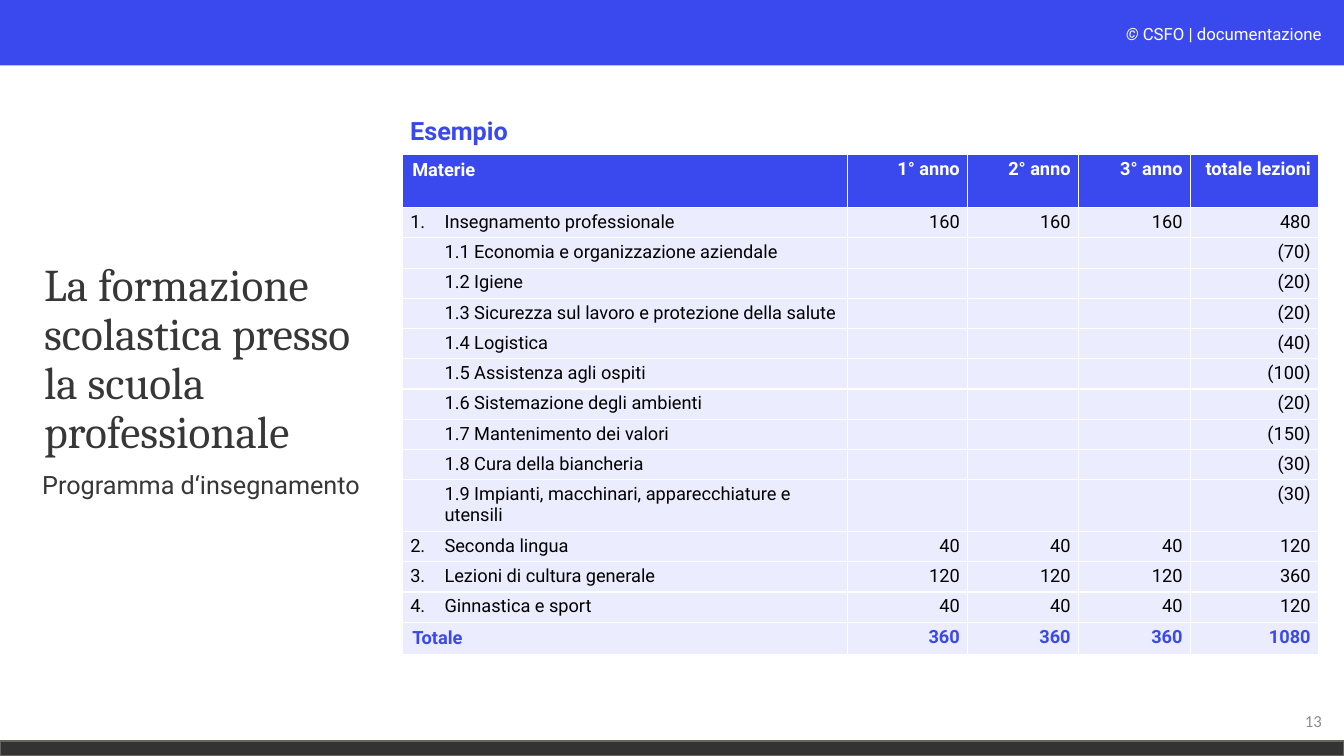
from lxml import etree
from pptx import Presentation
from pptx.dml.color import RGBColor
from pptx.enum.shapes import MSO_SHAPE
from pptx.enum.text import MSO_ANCHOR, PP_ALIGN
from pptx.oxml.ns import qn
from pptx.util import Inches, Pt

LEFT, RIGHT = PP_ALIGN.LEFT, PP_ALIGN.RIGHT
TOP, MIDDLE = MSO_ANCHOR.TOP, MSO_ANCHOR.MIDDLE
RECTANGLE = MSO_SHAPE.RECTANGLE

WHITE = RGBColor(0xFF, 0xFF, 0xFF)
BLACK = RGBColor(0x00, 0x00, 0x00)
BLUE = RGBColor(0x3A, 0x49, 0xEE)
PALE_BLUE = RGBColor(0xEB, 0xEC, 0xFE)
CHARCOAL = RGBColor(0x33, 0x33, 0x33)
FOOTER_EDGE = RGBColor(0x66, 0x63, 0x60)
INK = RGBColor(0x37, 0x37, 0x37)
GREY = RGBColor(0x8C, 0x8C, 0x8C)

SLIDE_WIDTH, SLIDE_HEIGHT = Inches(13.33), Inches(7.5)
COLUMN_SHARES = (2.55, 30.6, 8.93, 8.25, 8.33, 9.53)
HEADER_SHARE, ROW_SHARE = 7.07, 4
TABLE_SIZE = Pt(13)

HEADINGS = ("Materie", "", "1° anno", "2° anno", "3° anno", "totale lezioni")
PROFESSIONAL_TOPICS = (
    ("Economia e organizzazione aziendale", 70),
    ("Igiene", 20),
    ("Sicurezza sul lavoro e protezione della salute", 20),
    ("Logistica", 40),
    ("Assistenza agli ospiti", 100),
    ("Sistemazione degli ambienti", 20),
    ("Mantenimento dei valori", 150),
    ("Cura della biancheria", 30),
    ("Impianti, macchinari, apparecchiature e utensili", 30),
)
SUBJECTS = (
    ("Insegnamento professionale", 160),
    ("Seconda lingua", 40),
    ("Lezioni di cultura generale", 120),
    ("Ginnastica e sport", 40),
)
YEARS = 3


def across(percent):
    return round(SLIDE_WIDTH * percent / 100)


def down(percent):
    return round(SLIDE_HEIGHT * percent / 100)


def area(left, top, width, height):
    return across(left), down(top), across(width), down(height)


def style_font(font, size, color, name="Roboto", bold=False):
    font.size = size
    font.name = name
    font.bold = bold
    font.color.rgb = color


def add_band(slide, place, color, edge=None):
    band = slide.shapes.add_shape(RECTANGLE, *area(*place))
    band.shadow.inherit = False
    band.fill.solid()
    band.fill.fore_color.rgb = color
    if edge is None:
        band.line.fill.background()
    else:
        band.line.color.rgb = edge
        band.line.width = Pt(1)


def add_text(slide, place, wording, size, color, name="Roboto", bold=False,
             align=LEFT, anchor=TOP, spacing=1.0):
    frame = slide.shapes.add_textbox(*area(*place)).text_frame
    frame.word_wrap = True
    frame.vertical_anchor = anchor
    line = frame.paragraphs[0]
    line.alignment = align
    line.line_spacing = spacing
    style_font(line.font, Pt(size), color, name, bold)
    for part in wording:
        line.add_run().text = part
    return line


def add_border(cell, side, visible):
    border = etree.SubElement(cell._tc.get_or_add_tcPr(), qn(f"a:ln{side}"), w=str(Pt(1)))
    if visible:
        paint = etree.SubElement(border, qn("a:solidFill"))
        etree.SubElement(paint, qn("a:srgbClr"), val=str(WHITE))
    else:
        etree.SubElement(border, qn("a:noFill"))


def fill_cell(cell, column, wording, fill, color, bold):
    for side in "LRTB":
        inside_subject = (column, side) in ((0, "R"), (1, "L"))
        add_border(cell, side, not inside_subject or cell.is_merge_origin)
    cell.fill.solid()
    cell.fill.fore_color.rgb = fill
    wide = cell.is_merge_origin
    cell.margin_left = cell.margin_right = Inches(0.1 if wide else 0.08)
    cell.margin_top = cell.margin_bottom = Inches(0.05 if wide else 0.04)
    line = cell.text_frame.paragraphs[0]
    line.alignment = RIGHT if column > 1 else LEFT
    style_font(line.font, TABLE_SIZE, color, bold=bold)
    if wording:
        line.add_run().text = wording
    else:
        line._p.get_or_add_endParaRPr().set("sz", str(round(TABLE_SIZE.pt * 100)))


def lesson_rows():
    rows = [HEADINGS]
    for number, (subject, lessons) in enumerate(SUBJECTS, 1):
        yearly = (str(lessons),) * YEARS
        rows.append((f"{number}.", subject, *yearly, str(lessons * YEARS)))
        if number == 1:
            for part, (topic, hours) in enumerate(PROFESSIONAL_TOPICS, 1):
                rows.append(("", f"1.{part} {topic}", *("",) * YEARS, f"({hours})"))
    total = sum(lessons for _, lessons in SUBJECTS)
    rows.append(("Totale", "", *(str(total),) * YEARS, str(total * YEARS)))
    return rows


def add_lesson_table(slide, left, top):
    rows = lesson_rows()
    last = len(rows) - 1
    place = area(left, top, sum(COLUMN_SHARES), HEADER_SHARE + last * ROW_SHARE)
    lessons = slide.shapes.add_table(len(rows), len(COLUMN_SHARES), *place).table
    lessons.first_row = lessons.horz_banding = False
    for column, share in zip(lessons.columns, COLUMN_SHARES):
        column.width = across(share)
    for index, row in enumerate(rows):
        lessons.rows[index].height = down(ROW_SHARE if index else HEADER_SHARE)
        emphasis = index in (0, last)
        if emphasis:
            lessons.cell(index, 0).merge(lessons.cell(index, 1))
        fill = PALE_BLUE if index else BLUE
        color = WHITE if index == 0 else BLUE if index == last else BLACK
        for column, wording in enumerate(row):
            fill_cell(lessons.cell(index, column), column, wording, fill, color, emphasis)


def main():
    deck = Presentation()
    deck.slide_width, deck.slide_height = SLIDE_WIDTH, SLIDE_HEIGHT
    slide = deck.slides.add_slide(deck.slide_layouts[6])

    add_band(slide, (0, 0, 100, 8.67), BLUE)
    add_band(slide, (0, 98, 100, 2), CHARCOAL, FOOTER_EDGE)
    credit = add_text(slide, (64.66, 2.53, 34.43, 4), ("© ", "CSFO | documentazione"),
                      12, WHITE, align=RIGHT)
    credit.runs[0].font.italic = True
    add_text(slide, (2.55, 34.7, 24.75, 26),
             ("La formazione scolastica presso la scuola professionale",),
             32.4, INK, "Cambria", anchor=MIDDLE, spacing=0.9)
    add_text(slide, (76.59, 92.67, 22.5, 5.33), ("13",), 12, GREY, "Calibri",
             align=RIGHT, anchor=MIDDLE)
    add_text(slide, (2.4, 61.87, 66.1, 7.2), ("Programma d‘insegnamento",),
             18, INK, spacing=0.9)
    add_lesson_table(slide, 29.93, 20.4)
    add_text(slide, (29.78, 14.53, 40, 5.33), ("Esempio",), 18, BLUE, bold=True)

    deck.save("out.pptx")


if __name__ == "__main__":
    main()
